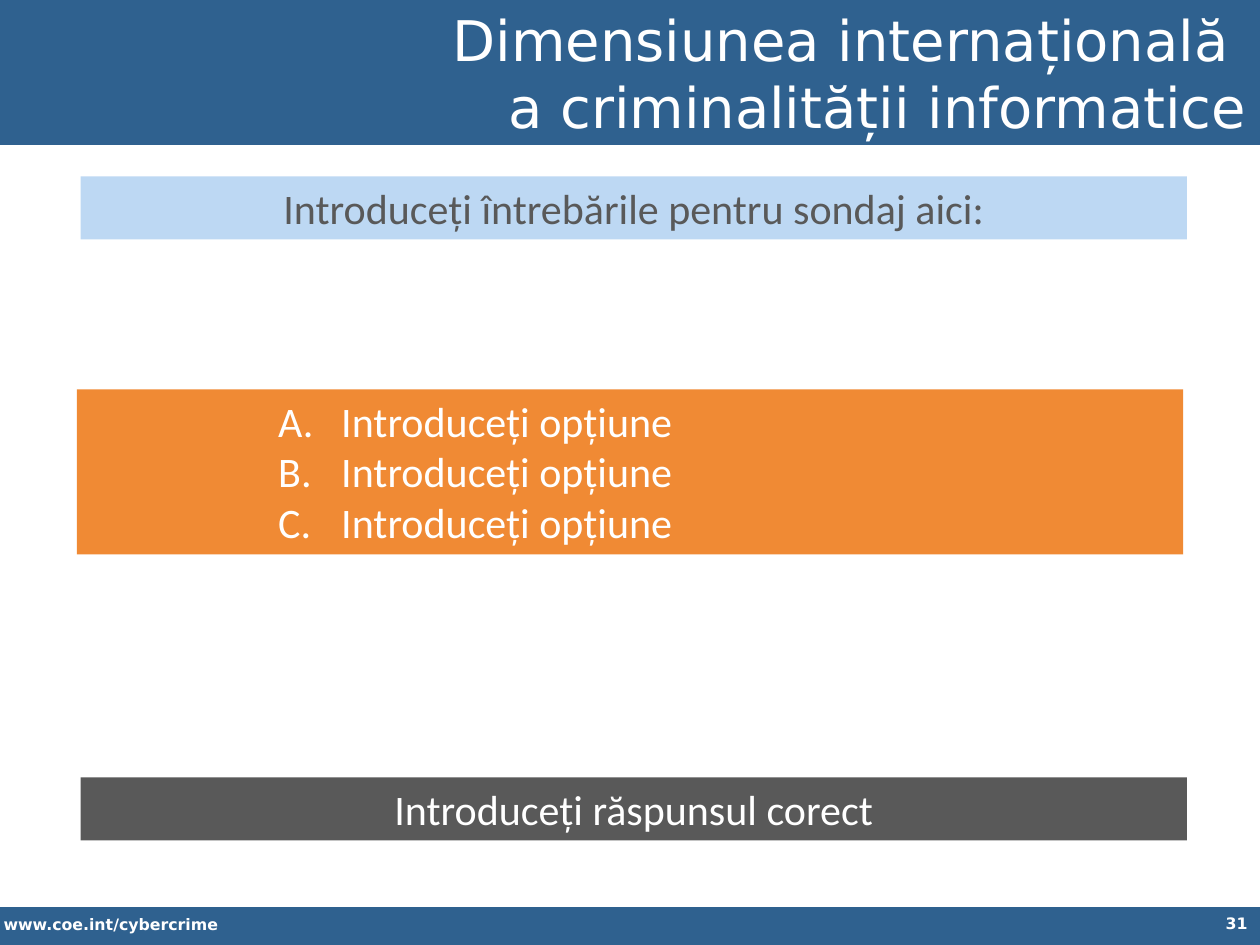
from dataclasses import dataclass

from lxml import etree
from pptx import Presentation
from pptx import util as u
from pptx.dml.color import RGBColor
from pptx.enum import shapes, text
from pptx.oxml import ns


@dataclass(frozen=True)
class Theme:
    """Colours, fonts and type sizes of the deck."""
    blue: str = "2F618F"
    pale: str = "BDD8F3"
    orange: str = "F08A34"
    grey: str = "595959"
    white: str = "FFFFFF"
    brand_font: str = "DejaVu Sans"
    body_font: str = "Calibri"
    title_size: int = 32
    body_size: int = 24
    small_size: int = 9


THEME = Theme()
LEFT, CENTER, RIGHT = text.PP_ALIGN.LEFT, text.PP_ALIGN.CENTER, text.PP_ALIGN.RIGHT


def add_panel(page, box, color):
    """Add a plain filled rectangle."""
    panel = page.shapes.add_shape(shapes.MSO_SHAPE.RECTANGLE, *map(u.Inches, box))
    panel.shadow.inherit = False
    panel.fill.solid()
    panel.fill.fore_color.rgb = RGBColor.from_string(color)
    panel.line.fill.background()
    return panel


def write_lines(shape, lines, font, size, color, align=LEFT, bold=False,
                anchor=text.MSO_ANCHOR.TOP):
    """Write one paragraph for each line and return the paragraphs."""
    frame = shape.text_frame
    frame.word_wrap = True
    frame.vertical_anchor = anchor
    for index, line in enumerate(lines):
        para = frame.add_paragraph() if index else frame.paragraphs[0]
        para.alignment = align
        span = para.add_run()
        span.text = line
        span.font.name = font
        span.font.size = u.Pt(size)
        span.font.bold = bold
        span.font.color.rgb = RGBColor.from_string(color)
    return frame.paragraphs


def add_header(page, box, lines):
    """Add the title band with its right-aligned title."""
    left, top, width, height = box
    add_panel(page, box, THEME.blue)
    title = add_panel(page, (left + 2.2, top + 0.1, width - 2.2, 1.01), THEME.blue)
    write_lines(title, lines, THEME.brand_font, THEME.title_size, THEME.white,
                RIGHT, anchor=text.MSO_ANCHOR.MIDDLE)


def add_footer(page, box, address, number):
    """Add the bottom band with the web address and page number."""
    left, top, width, height = box
    add_panel(page, box, THEME.blue)
    labels = (
        ((left - 0.07, top + 0.01, 3.52, 0.25), address, LEFT),
        ((left + width - 2.33, top, 2.33, 0.3), number, RIGHT),
    )
    for place, label, align in labels:
        label_box = page.shapes.add_textbox(*map(u.Inches, place))
        write_lines(label_box, [label], THEME.brand_font, THEME.small_size,
                    THEME.white, align, bold=True)


def add_banner(page, box, line, fill, color):
    """Add a filled strip with one centred line."""
    write_lines(add_panel(page, box, fill), [line], THEME.body_font,
                THEME.body_size, color, CENTER)


def add_options(page, box, options):
    """Add the panel of lettered answer options."""
    panel = add_panel(page, box, THEME.orange)
    for para in write_lines(panel, options, THEME.body_font, THEME.body_size, THEME.white):
        para.level = 3
        properties = para._p.get_or_add_pPr()
        properties.set("marL", str(u.Inches(2)))
        properties.set("indent", str(u.Inches(-0.5)))
        etree.SubElement(properties, ns.qn("a:buFont"), typeface="+mj-lt")
        etree.SubElement(properties, ns.qn("a:buAutoNum"), type="alphaUcPeriod")


def main():
    """Build the poll slide and save it."""
    deck = Presentation()
    deck.slide_width, deck.slide_height = u.Inches(10), u.Inches(7.5)
    page = deck.slides.add_slide(deck.slide_layouts[6])
    add_footer(page, (0, 7.2, 10, 0.32), "www.coe.int/cybercrime", "31")
    add_header(page, (0, -0.03, 10, 1.18),
               ["Dimensiunea internațională ", "a criminalității informatice"])
    add_banner(page, (0.64, 1.4, 8.78, 0.5),
               "Introduceți întrebările pentru sondaj aici:", THEME.pale, THEME.grey)
    add_banner(page, (0.64, 6.17, 8.78, 0.5),
               "Introduceți răspunsul corect", THEME.grey, THEME.white)
    add_options(page, (0.61, 3.09, 8.78, 1.31), ["Introduceți opțiune"] * 3)
    deck.save("out.pptx")


if __name__ == "__main__":
    main()
